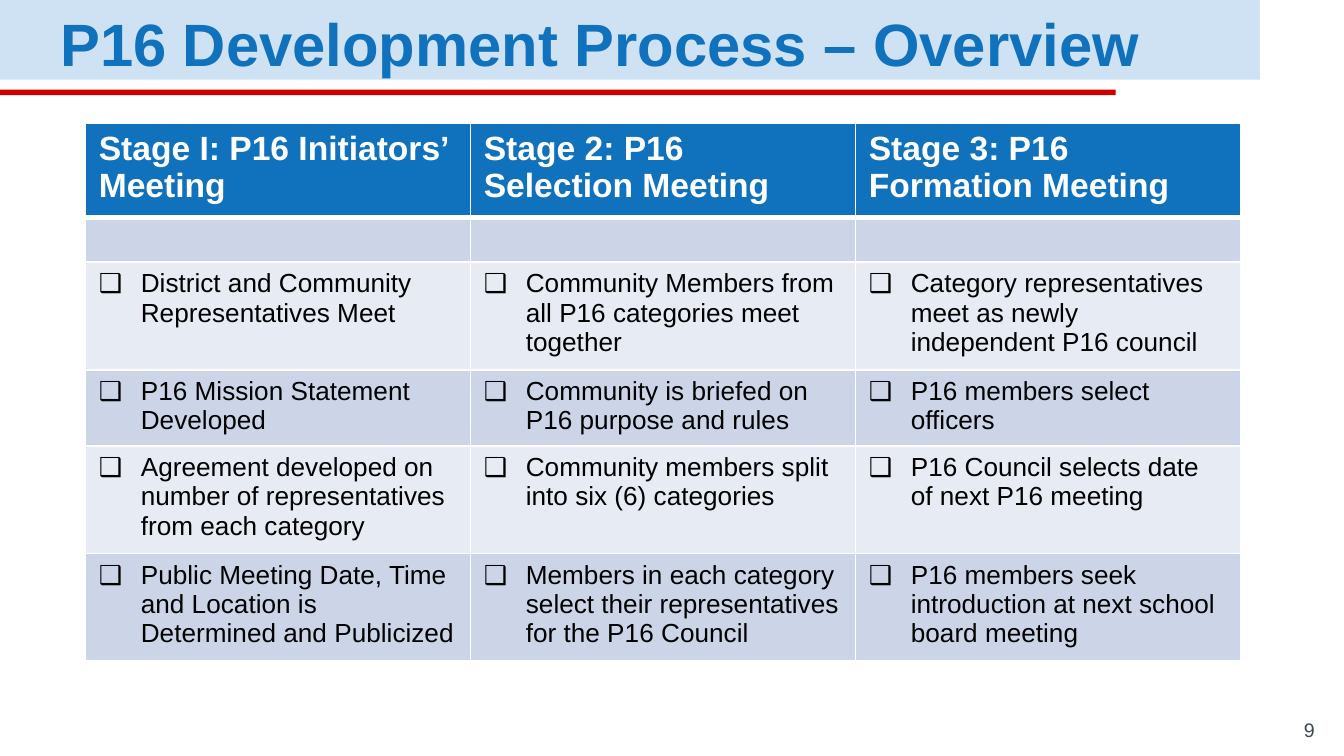
from lxml import etree
from pptx import Presentation
from pptx.dml.color import RGBColor
from pptx.enum.shapes import MSO_SHAPE
from pptx.enum.text import MSO_ANCHOR, PP_ALIGN
from pptx.oxml.ns import qn
from pptx.util import Pt

PX = 9525
RECT = MSO_SHAPE.RECTANGLE
MIDDLE, BOTTOM = MSO_ANCHOR.MIDDLE, MSO_ANCHOR.BOTTOM
LEFT, RIGHT = PP_ALIGN.LEFT, PP_ALIGN.RIGHT

BLUE = RGBColor(0x10, 0x71, 0xBD)
PALE = RGBColor(0xCF, 0xE2, 0xF3)
RED = RGBColor(0xCC, 0x00, 0x00)
SLATE = RGBColor(0x3A, 0x49, 0x50)
WHITE = RGBColor(0xFF, 0xFF, 0xFF)
BLACK = RGBColor(0x00, 0x00, 0x00)
DARK = RGBColor(0xCC, 0xD5, 0xE8)
LIGHT = RGBColor(0xE7, 0xEB, 0xF4)

STAGES = [
    ("Stage I: P16 Initiators’ Meeting", "Stage 2: P16 Selection Meeting",
     "Stage 3: P16 Formation Meeting"),
    ("", "", ""),
    ("District and Community Representatives Meet",
     "Community Members from all P16 categories meet together",
     "Category representatives meet as newly independent P16 council"),
    ("P16 Mission Statement Developed",
     "Community is briefed on P16 purpose and rules",
     "P16 members select officers"),
    ("Agreement developed on number of representatives from each category",
     "Community members split into six (6) categories",
     "P16 Council selects date of next P16 meeting"),
    ("Public Meeting Date, Time and Location is Determined and Publicized",
     "Members in each category select their representatives for the P16 Council",
     "P16 members seek introduction at next school board meeting"),
]
HEIGHTS = [66, 32, 54, 54, 76, 76]


def px(*vals):
    return [val * PX for val in vals]


def write(frame, text, size=14, color=BLACK, bold=False, align=LEFT,
          bullet=None, space=None, after=None):
    para = frame.paragraphs[0]
    para.alignment = align
    if space:
        para.line_spacing = space
    if after:
        para.space_after = Pt(after)
    if not text:
        end = etree.SubElement(para._p, qn("a:endParaRPr"))
        end.set("sz", str(size * 100))
        return
    if bullet:
        props = para._p.get_or_add_pPr()
        props.set("marL", str(30 * PX))
        props.set("indent", str(-30 * PX))
        etree.SubElement(props, qn("a:buFont")).set("typeface", "Arial")
        etree.SubElement(props, qn("a:buChar")).set("char", bullet)
    run = para.add_run()
    run.text = text
    font = run.font
    font.name, font.size, font.bold = "Arial", Pt(size), bold
    font.color.rgb = color


def label(slide, box, text, anchor, **fmt):
    frame = slide.shapes.add_textbox(*px(*box)).text_frame
    frame.word_wrap = True
    frame.vertical_anchor = anchor
    frame.margin_left, frame.margin_top, frame.margin_right, frame.margin_bottom = px(10, 10, 10, 10)
    write(frame, text, **fmt)


def bar(slide, box, color):
    shape = slide.shapes.add_shape(RECT, *px(*box))
    shape.shadow.inherit = False
    shape.fill.solid()
    shape.fill.fore_color.rgb = color
    shape.line.fill.background()


def header(slide, box, text):
    left, top, width, height = box
    bar(slide, (left, top, width, height), PALE)
    bar(slide, (left, top + height + 7, width - 103, 4), RED)
    label(slide, (left + 33, top + 3, width - 33, height - 10), text, MIDDLE,
          size=32, color=BLUE, bold=True, space=1.15, after=16)


def border(cell, base):
    props = cell._tc.get_or_add_tcPr()
    for spot, (side, width) in enumerate(zip("LRTB", (1, 1, 1, base))):
        line = etree.Element(qn("a:ln" + side), w=str(Pt(width)))
        fill = etree.SubElement(line, qn("a:solidFill"))
        etree.SubElement(fill, qn("a:srgbClr")).set("val", str(WHITE))
        props.insert(spot, line)


def grid(slide, box, data, heights):
    frame = slide.shapes.add_table(len(data), len(data[0]), *px(*box))
    table = frame.table
    table.horz_banding = False
    for row, height in zip(table.rows, heights):
        row.height = height * PX
    frame.height = box[3] * PX
    for r, texts in enumerate(data):
        head = r == 0
        for c, text in enumerate(texts):
            cell = table.cell(r, c)
            cell.fill.solid()
            cell.fill.fore_color.rgb = BLUE if head else DARK if r % 2 else LIGHT
            border(cell, 3 if head else 1)
            if head:
                write(cell.text_frame, text, size=18, color=WHITE, bold=True)
            else:
                write(cell.text_frame, text, bullet="❑")


def main():
    deck = Presentation()
    deck.slide_width, deck.slide_height = px(960, 540)
    slide = deck.slides.add_slide(deck.slide_layouts[6])
    header(slide, (0, 0, 900, 57), "P16 Development Process – Overview")
    label(slide, (891, 513, 58, 25), "9", BOTTOM,
          size=10.5, color=SLATE, align=RIGHT)
    grid(slide, (61, 88, 825, 384), STAGES, HEIGHTS)
    deck.save("out.pptx")


if __name__ == "__main__":
    main()
